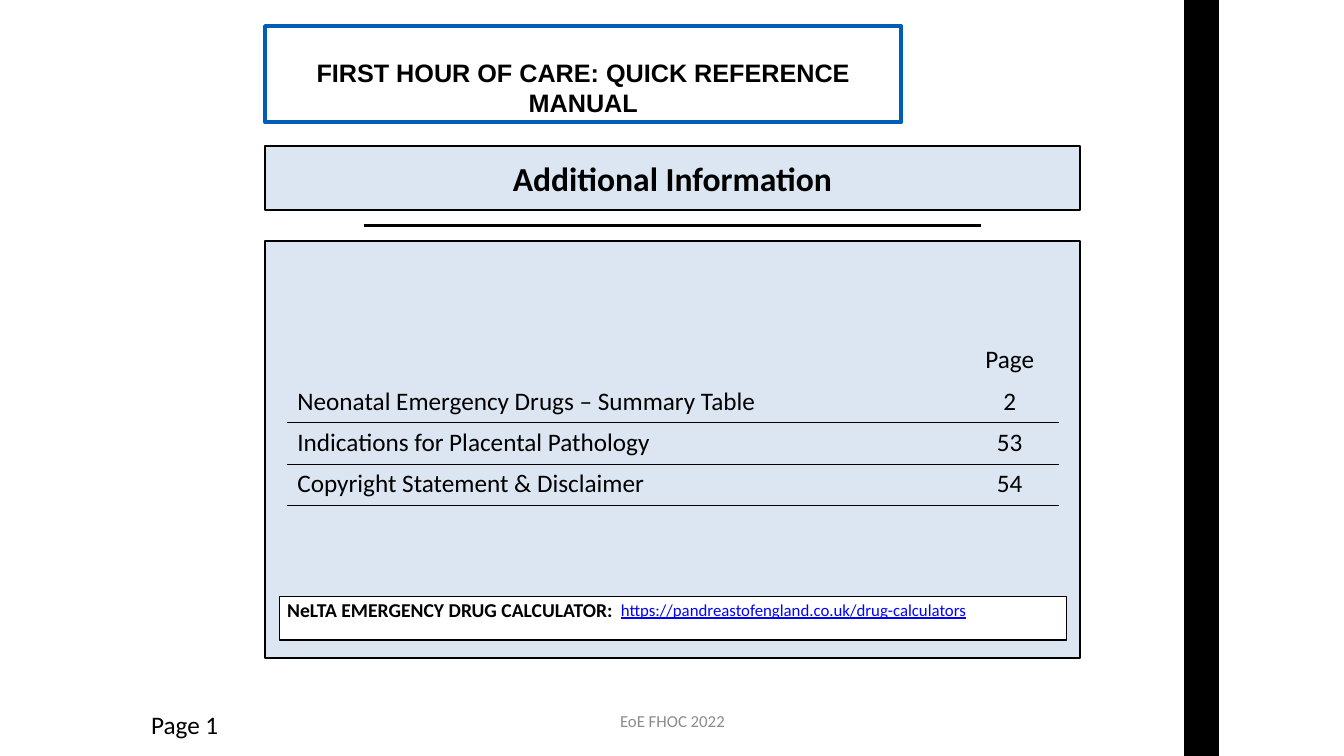
"""Build the Additional Information contents slide of a quick reference manual."""
from lxml import etree
from pptx import Presentation
from pptx.dml.color import RGBColor
from pptx.enum.shapes import MSO_CONNECTOR, MSO_SHAPE
from pptx.enum.text import MSO_ANCHOR, PP_ALIGN
from pptx.oxml.ns import qn
from pptx.util import Inches, Pt

LEFT, CENTER = PP_ALIGN.LEFT, PP_ALIGN.CENTER
TOP, MIDDLE = MSO_ANCHOR.TOP, MSO_ANCHOR.MIDDLE
RECT, STRAIGHT = MSO_SHAPE.RECTANGLE, MSO_CONNECTOR.STRAIGHT

COLORS = {"black": "000000", "white": "FFFFFF", "panel": "DCE6F2",
          "frame": "005EB8", "footer": "8C8C8C", "link": "0000FF"}
NO_STYLE = "{2D5ABB26-0587-4C30-8999-92F81FD0307C}"

TITLE = "Additional Information"
TITLE_BOX = (2.63, 1.45, 8.08, 0.63)
PANELS = [
    ((2.63, 2.39, 8.08, 4.14), "panel", "black", 1.5),
    ((2.77, 5.92, 7.81, 0.43), "white", "black", 0.75),
    ((2.63, 0.26, 6.31, 0.95), None, "frame", 3),
]
RULES = [
    ((3.61, 2.24, 9.73, 2.24), 2),
    ((11.92, 0, 11.92, 7.5), 25),
]
TEXTS = [
    ("Page 1", (1.4, 6.99, 0.88, 0.4), LEFT, TOP, False,
     {"size": 18}),
    ("NeLTA EMERGENCY DRUG CALCULATOR:", (2.75, 5.88, 8.19, 0.34), LEFT, TOP, True,
     {"size": 14, "bold": True}),
    ("EoE FHOC 2022", (4.56, 6.95, 4.22, 0.4), CENTER, MIDDLE, True,
     {"size": 12, "color": "footer"}),
    ("https://pandreastofengland.co.uk/drug-calculators", (6.06, 5.9, 3.66, 0.3),
     LEFT, TOP, False, {"size": 12, "color": "link", "underline": True}),
    ("FIRST HOUR OF CARE: QUICK REFERENCE MANUAL", (2.74, 0.52, 6.09, 0.68),
     CENTER, TOP, True, {"size": 18, "name": "Arial", "bold": True}),
]
CONTENTS = [
    ("", "Page"),
    ("Neonatal Emergency Drugs – Summary Table", "2"),
    ("Indications for Placental Pathology", "53"),
    ("Copyright Statement & Disclaimer", "54"),
]
TABLE_AT = (2.85, 3.37)
COL_WIDTHS = (6.68, 0.97)
ROW_HEIGHT = 0.41


def rgb(name):
    """Return the named colour."""
    return RGBColor.from_string(COLORS[name])


def inches(values):
    """Convert numbers to lengths."""
    return [Inches(v) for v in values]


def set_font(font, size, color="black", name="Calibri", **style):
    """Apply font values."""
    values = {"size": Pt(size), "name": name, **style}
    for key, value in values.items():
        setattr(font, key, value)
    font.color.rgb = rgb(color)


def set_text(tf, text, align, fmt):
    """Write one formatted paragraph."""
    p = tf.paragraphs[0]
    p.alignment = align
    r = p.add_run()
    r.text = text
    set_font(r.font, **fmt)


def set_box(sp, fill, line, width):
    """Set the fill and outline of a box."""
    if fill:
        sp.fill.solid()
        sp.fill.fore_color.rgb = rgb(fill)
    else:
        sp.fill.background()
    sp.line.color.rgb = rgb(line)
    sp.line.width = Pt(width)


def add_title(s):
    """Format the title placeholder."""
    sp = s.shapes.title
    sp.left, sp.top, sp.width, sp.height = inches(TITLE_BOX)
    set_box(sp, "panel", "black", 1.5)
    sp.text_frame.vertical_anchor = MIDDLE
    set_text(sp.text_frame, TITLE, CENTER, {"size": 24, "bold": True})


def add_panel(s, box, fill, line, width):
    """Add an outlined rectangle."""
    sp = s.shapes.add_shape(RECT, *inches(box))
    sp.shadow.inherit = False
    set_box(sp, fill, line, width)


def add_rule(s, ends, width):
    """Add a straight black line."""
    c = s.shapes.add_connector(STRAIGHT, *inches(ends))
    c.line.color.rgb = rgb("black")
    c.line.width = Pt(width)
    etree.SubElement(c._element.spPr, qn("a:effectLst"))


def add_text(s, text, box, align, anchor, wrap, fmt):
    """Add a text box."""
    tf = s.shapes.add_textbox(*inches(box)).text_frame
    tf.word_wrap = wrap
    tf.vertical_anchor = anchor
    set_text(tf, text, align, fmt)


def add_bottom_border(cell):
    """Draw a thin line below a cell."""
    ln = etree.Element(qn("a:lnB"), w=str(Pt(0.25)))
    fill = etree.SubElement(ln, qn("a:solidFill"))
    etree.SubElement(fill, qn("a:srgbClr"), val=COLORS["black"])
    cell._tc.get_or_add_tcPr().insert(0, ln)


def add_contents(s):
    """Add the table of contents."""
    size = (sum(COL_WIDTHS), ROW_HEIGHT * len(CONTENTS))
    frame = s.shapes.add_table(len(CONTENTS), len(COL_WIDTHS), *inches(TABLE_AT + size))
    table = frame.table
    table.first_row = table.horz_banding = False
    table._tbl.tblPr.find(qn("a:tableStyleId")).text = NO_STYLE
    for col, width in zip(table.columns, COL_WIDTHS):
        col.width = Inches(width)
    for i, row in enumerate(CONTENTS):
        table.rows[i].height = Inches(ROW_HEIGHT)
        for j, text in enumerate(row):
            cell = table.cell(i, j)
            cell.fill.background()
            if text:
                set_text(cell.text_frame, text, CENTER if j else LEFT, {"size": 18})
            if i:
                add_bottom_border(cell)


def main():
    """Build and save the slide."""
    prs = Presentation()
    prs.slide_width, prs.slide_height = inches((13.33, 7.5))
    s = prs.slides.add_slide(prs.slide_layouts[5])
    add_title(s)
    for panel in PANELS:
        add_panel(s, *panel)
    for rule in RULES:
        add_rule(s, *rule)
    add_contents(s)
    for item in TEXTS:
        add_text(s, *item)
    prs.save("out.pptx")


if __name__ == "__main__":
    main()
